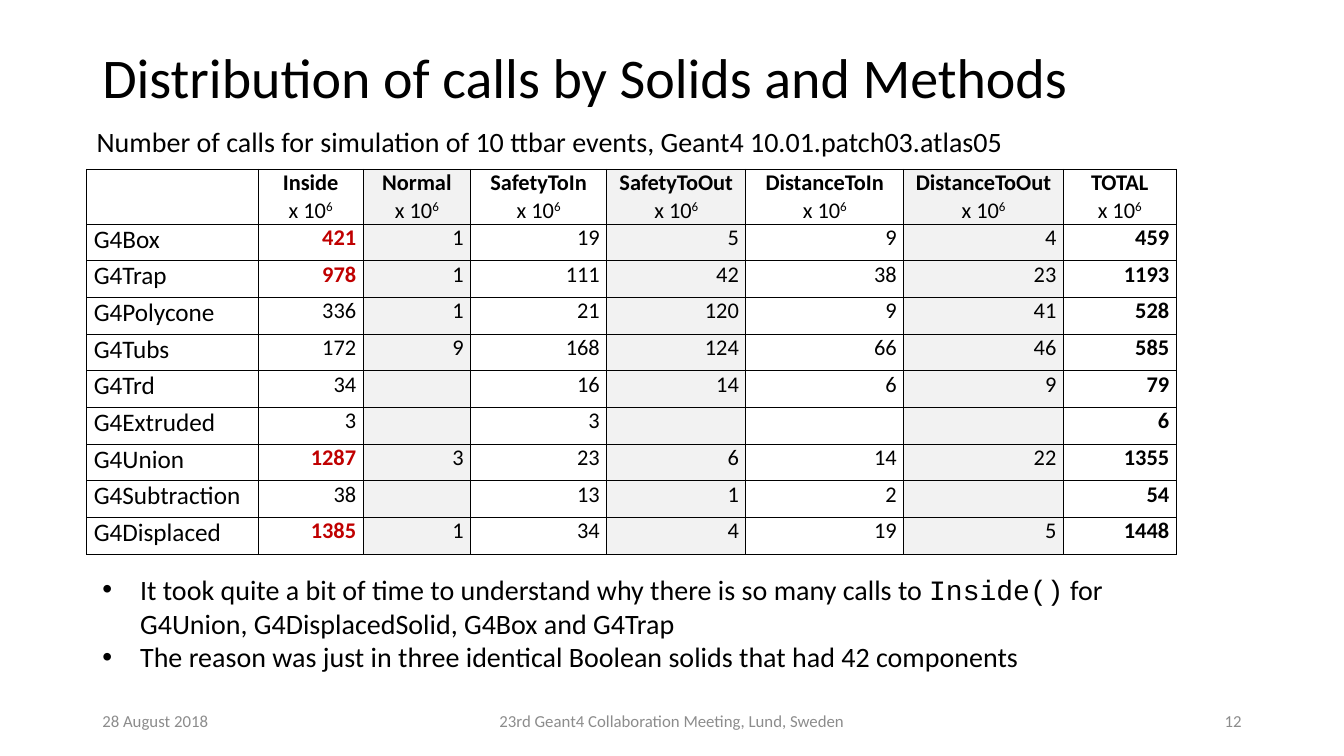
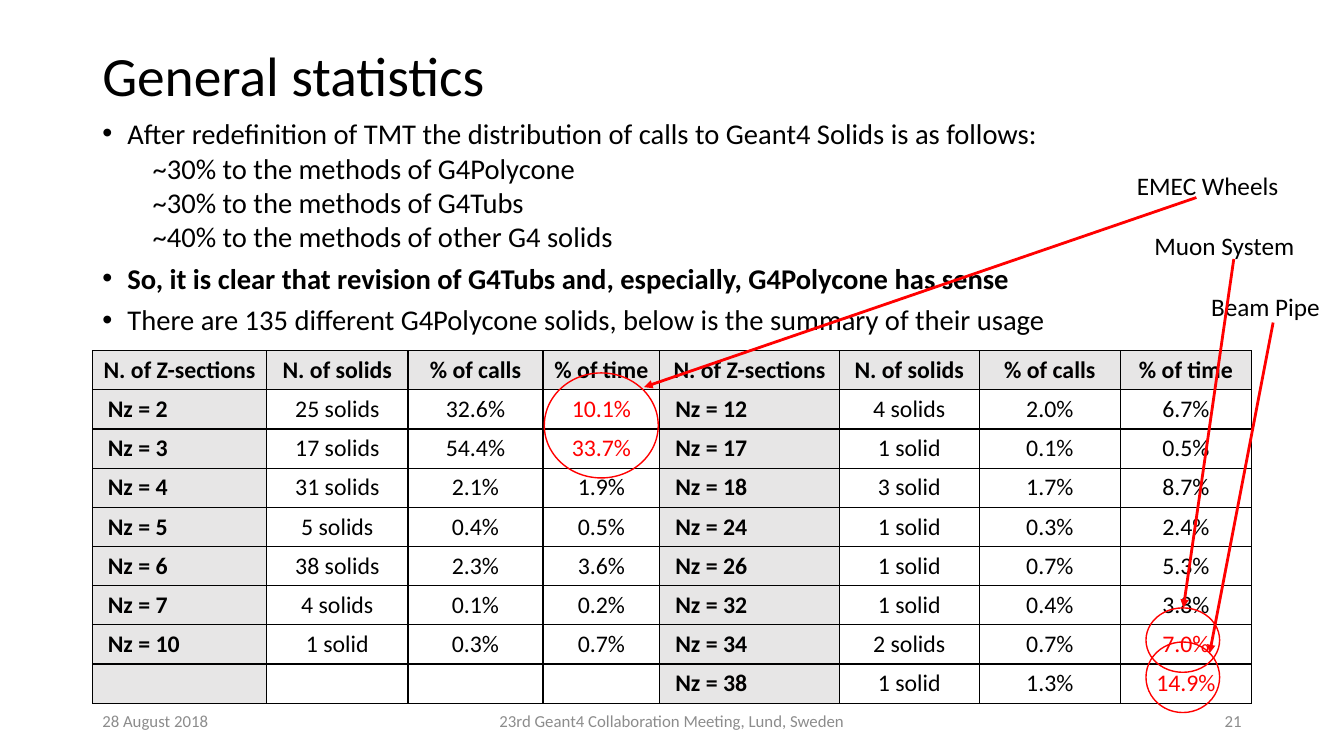
from lxml import etree
from pptx import Presentation
from pptx.dml.color import RGBColor
from pptx.enum.shapes import MSO_CONNECTOR, MSO_SHAPE
from pptx.enum.text import MSO_ANCHOR, PP_ALIGN
from pptx.oxml.ns import qn
from pptx.util import Pt

BLACK = RGBColor(0x00, 0x00, 0x00)
GRAY_TEXT = RGBColor(0x8C, 0x8C, 0x8C)
DARK_RED = RGBColor(0xC0, 0x00, 0x00)
RED = RGBColor(0xFF, 0x00, 0x00)
COLUMN_SHADE = RGBColor(0xF2, 0xF2, 0xF2)
HEADER_SHADE = RGBColor(0xE7, 0xE6, 0xE6)

LEFT, CENTER, RIGHT = PP_ALIGN.LEFT, PP_ALIGN.CENTER, PP_ALIGN.RIGHT
TOP, MIDDLE = MSO_ANCHOR.TOP, MSO_ANCHOR.MIDDLE
ELLIPSE, STRAIGHT = MSO_SHAPE.OVAL, MSO_CONNECTOR.STRAIGHT

FONT, CODE_FONT = "Calibri", "Courier New"
MARGIN, CONTENT_WIDTH = 66, 828
FOOTER_TOP, FOOTER_HEIGHT = 500.4, 28.8

# Calls in millions: Inside, Normal, SafetyToIn, SafetyToOut, DistanceToIn, DistanceToOut, TOTAL
METHODS = ["Inside", "Normal", "SafetyToIn", "SafetyToOut", "DistanceToIn", "DistanceToOut", "TOTAL"]
CALLS = [
    ("G4Box", 421, 1, 19, 5, 9, 4, 459),
    ("G4Trap", 978, 1, 111, 42, 38, 23, 1193),
    ("G4Polycone", 336, 1, 21, 120, 9, 41, 528),
    ("G4Tubs", 172, 9, 168, 124, 66, 46, 585),
    ("G4Trd", 34, "", 16, 14, 6, 9, 79),
    ("G4Extruded", 3, "", 3, "", "", "", 6),
    ("G4Union", 1287, 3, 23, 6, 14, 22, 1355),
    ("G4Subtraction", 38, "", 13, 1, 2, "", 54),
    ("G4Displaced", 1385, 1, 34, 4, 19, 5, 1448),
]
FREQUENT_INSIDE = {"G4Box", "G4Trap", "G4Union", "G4Displaced"}

USAGE_HEADER = ("N. of Z-sections", "N. of solids", "% of calls", "% of time")
USAGE_LEFT = [
    ("Nz = 2", "25 solids", "32.6%", "10.1%"),
    ("Nz = 3", "17 solids", "54.4%", "33.7%"),
    ("Nz = 4", "31 solids", "2.1%", "1.9%"),
    ("Nz = 5", "5 solids", "0.4%", "0.5%"),
    ("Nz = 6", "38 solids", "2.3%", "3.6%"),
    ("Nz = 7", "4 solids", "0.1%", "0.2%"),
    ("Nz = 10", "1 solid", "0.3%", "0.7%"),
    ("", "", "", ""),
]
USAGE_RIGHT = [
    ("Nz = 12", "4 solids", "2.0%", "6.7%"),
    ("Nz = 17", "1 solid", "0.1%", "0.5%"),
    ("Nz = 18", "3 solid", "1.7%", "8.7%"),
    ("Nz = 24", "1 solid", "0.3%", "2.4%"),
    ("Nz = 26", "1 solid", "0.7%", "5.3%"),
    ("Nz = 32", "1 solid", "0.4%", "3.8%"),
    ("Nz = 34", "2 solids", "0.7%", "7.0%"),
    ("Nz = 38", "1 solid", "1.3%", "14.9%"),
]
COSTLY_TIMES = {"10.1%", "33.7%", "7.0%", "14.9%"}


# Text
def write(paragraph, text, size=20, color=BLACK, bold=False, font=FONT, superscript=False):
    run = paragraph.add_run()
    run.text = str(text)
    run.font.name, run.font.size, run.font.bold = font, Pt(size), bold
    run.font.color.rgb = color
    if superscript:
        run.font._element.set("baseline", "30000")


def indent(paragraph, left, bullet=False):
    properties = paragraph._p.get_or_add_pPr()
    properties.set("marL", str(Pt(left)))
    properties.set("indent", str(Pt(-left if bullet else 0)))
    if bullet:
        etree.SubElement(properties, qn("a:buFont")).set("typeface", "Arial")
        etree.SubElement(properties, qn("a:buChar")).set("char", "•")


def add_frame(slide, left, top, width, height, anchor=TOP):
    frame = slide.shapes.add_textbox(Pt(left), Pt(top), Pt(width), Pt(height)).text_frame
    frame.word_wrap = True
    frame.vertical_anchor = anchor
    return frame


def next_paragraph(frame):
    first = frame.paragraphs[0]
    return frame.add_paragraph() if first.runs else first


def add_line(slide, box, text, align=LEFT, anchor=TOP, spacing=None, **style):
    paragraph = add_frame(slide, *box, anchor=anchor).paragraphs[0]
    paragraph.alignment = align
    paragraph.line_spacing = spacing
    write(paragraph, text, **style)


# Title and footer of every slide
def add_slide(deck, title, number, title_height, title_size):
    slide = deck.slides.add_slide(deck.slide_layouts[6])
    add_line(slide, (MARGIN, 28.8, CONTENT_WIDTH, title_height), title,
             anchor=MIDDLE, spacing=0.9, size=title_size)
    footer = [
        (MARGIN, 216, "28 August 2018", LEFT),
        (318, 324, "23rd Geant4 Collaboration Meeting, Lund, Sweden", CENTER),
        (678, 216, number, RIGHT),
    ]
    for left, width, text, align in footer:
        add_line(slide, (left, FOOTER_TOP, width, FOOTER_HEIGHT), text,
                 align=align, anchor=MIDDLE, size=12, color=GRAY_TEXT)
    return slide


# Tables
def add_grid(slide, left, top, widths, heights):
    frame = slide.shapes.add_table(len(heights), len(widths), Pt(left), Pt(top),
                                   Pt(sum(widths)), Pt(sum(heights)))
    table = frame.table
    table.first_row = table.horz_banding = False
    for column, width in zip(table.columns, widths):
        column.width = Pt(width)
    for row, height in zip(table.rows, heights):
        row.height = Pt(height)
    return table


def format_cell(cell, fill=None, side_margin=5, anchor=TOP):
    cell.margin_left = cell.margin_right = Pt(side_margin)
    cell.margin_top = cell.margin_bottom = 0
    cell.vertical_anchor = anchor
    if fill is None:
        cell.fill.background()
    else:
        cell.fill.solid()
        cell.fill.fore_color.rgb = fill
    properties = cell._tc.get_or_add_tcPr()
    for position, side in enumerate(("a:lnL", "a:lnR", "a:lnT", "a:lnB")):
        border = etree.Element(qn(side), w=str(Pt(1)))
        paint = etree.SubElement(border, qn("a:solidFill"))
        etree.SubElement(paint, qn("a:srgbClr")).set("val", str(BLACK))
        properties.insert(position, border)


def write_cell(cell, text, align, **style):
    if text != "":
        paragraph = next_paragraph(cell.text_frame)
        paragraph.alignment = align
        write(paragraph, text, **style)


def add_calls_table(slide):
    widths = [122.4, 75, 76.8, 97.2, 99.4, 112.8, 114, 80.6]
    table = add_grid(slide, 62, 121, widths, [39.1] + [26.2] * len(CALLS))
    total = len(METHODS)
    for row in range(len(CALLS) + 1):
        for column in range(total + 1):
            shaded = column in (2, 4, 6)
            format_cell(table.cell(row, column), fill=COLUMN_SHADE if shaded else None)
    for column, method in enumerate(METHODS, start=1):
        cell = table.cell(0, column)
        write_cell(cell, method, CENTER, size=16, bold=True)
        write_cell(cell, "x 10", CENTER, size=16)
        write(cell.text_frame.paragraphs[1], "6", size=16, superscript=True)
    for row, (solid, *counts) in enumerate(CALLS, start=1):
        write_cell(table.cell(row, 0), solid, LEFT, size=18)
        for column, count in enumerate(counts, start=1):
            frequent = column == 1 and solid in FREQUENT_INSIDE
            write_cell(table.cell(row, column), count, RIGHT, size=16,
                       bold=frequent or column == total,
                       color=DARK_RED if frequent else BLACK)


def add_usage_table(slide):
    widths = [124.6, 100.8, 96.5, 83.5, 128.2, 100, 100.8, 93.6]
    rows = [USAGE_HEADER * 2] + [a + b for a, b in zip(USAGE_LEFT, USAGE_RIGHT)]
    table = add_grid(slide, MARGIN, 250.5, widths, [28] * len(rows))
    for row, texts in enumerate(rows):
        for column, text in enumerate(texts):
            section = column % len(USAGE_HEADER) == 0
            heading = row == 0 or section
            row_label = row > 0 and section
            cell = table.cell(row, column)
            format_cell(cell, fill=HEADER_SHADE if heading else None,
                        side_margin=11 if row_label else 7.2, anchor=MIDDLE)
            write_cell(cell, text, LEFT if row_label else CENTER, size=17, bold=heading,
                       color=RED if text in COSTLY_TIMES else BLACK)


# Marks on the costly solids
def add_ring(slide, left, top, width, height):
    ring = slide.shapes.add_shape(ELLIPSE, Pt(left), Pt(top), Pt(width), Pt(height))
    ring.shadow.inherit = False
    ring.fill.background()
    ring.line.color.rgb = RED
    ring.line.width = Pt(1)


def add_arrow(slide, start, end):
    arrow = slide.shapes.add_connector(STRAIGHT, *map(Pt, start + end))
    arrow.line.color.rgb = RED
    arrow.line.width = Pt(0)
    etree.SubElement(arrow.line._get_or_add_ln(), qn("a:tailEnd")).set("type", "triangle")
    etree.SubElement(arrow._element.spPr, qn("a:effectLst"))


def add_detector_labels(slide):
    frame = add_frame(slide, 805, 118, 154.8, 116.6)
    for row, (detector, left) in enumerate([("EMEC Wheels", 0), ("Muon System", 12.5), ("Beam Pipe", 53)]):
        paragraph = next_paragraph(frame)
        indent(paragraph, left)
        paragraph.space_before = Pt(21.5 if row else 0)
        write(paragraph, detector, size=18)


# Slides
def build_calls_slide(deck):
    slide = add_slide(deck, "Distribution of calls by Solids and Methods", 12, 57, 40)
    add_line(slide, (62, 85.7, 778, 32),
             "Number of calls for simulation of 10 ttbar events, Geant4 10.01.patch03.atlas05")
    add_calls_table(slide)
    findings = [
        [("It took quite a bit of time to understand why there is so many calls to ", FONT),
         ("Inside()", CODE_FONT),
         (" for G4Union, G4DisplacedSolid, G4Box and G4Trap", FONT)],
        [("The reason was just in three identical Boolean solids that had 42 components", FONT)],
    ]
    frame = add_frame(slide, MARGIN, 405.4, 774, 80)
    for finding in findings:
        paragraph = next_paragraph(frame)
        indent(paragraph, 27, bullet=True)
        for text, font in finding:
            write(paragraph, text, font=font)


def build_statistics_slide(deck):
    slide = add_slide(deck, "General statistics", 21, 54, 39.6)
    points = [  # text, bulleted, bold
        ("After redefinition of TMT the distribution of calls to Geant4 Solids is as follows:", True, False),
        ("~30% to the methods of G4Polycone", False, False),
        ("~30% to the methods of G4Tubs", False, False),
        ("~40% to the methods of other G4 solids", False, False),
        ("So, it is clear that revision of G4Tubs and, especially, G4Polycone has sense", True, True),
        ("There are 135 different G4Polycone solids, below is the summary of their usage", True, False),
    ]
    frame = add_frame(slide, MARGIN, 84.2, CONTENT_WIDTH, 165)
    for row, (text, bulleted, bold) in enumerate(points):
        paragraph = next_paragraph(frame)
        indent(paragraph, 18 if bulleted else 36, bullet=bulleted)
        paragraph.line_spacing = 0.8
        paragraph.space_before = Pt(0 if row == 0 else 10 if bulleted else 5)
        write(paragraph, text, size=20.4, bold=bold)
    add_usage_table(slide)
    for ring in [(388.8, 266.4, 81.4, 75), (818.6, 434.2, 52.6, 46), (818.6, 458.6, 52.6, 50.4)]:
        add_ring(slide, *ring)
    add_detector_labels(slide)
    add_arrow(slide, (854.6, 141.1), (460.1, 276.5))
    add_arrow(slide, (881.3, 185), (845.3, 434.2))
    add_arrow(slide, (909.4, 230.4), (864, 466.6))


def main():
    deck = Presentation()
    deck.slide_width, deck.slide_height = Pt(960), Pt(540)
    build_calls_slide(deck)
    build_statistics_slide(deck)
    deck.save("out.pptx")


if __name__ == "__main__":
    main()
